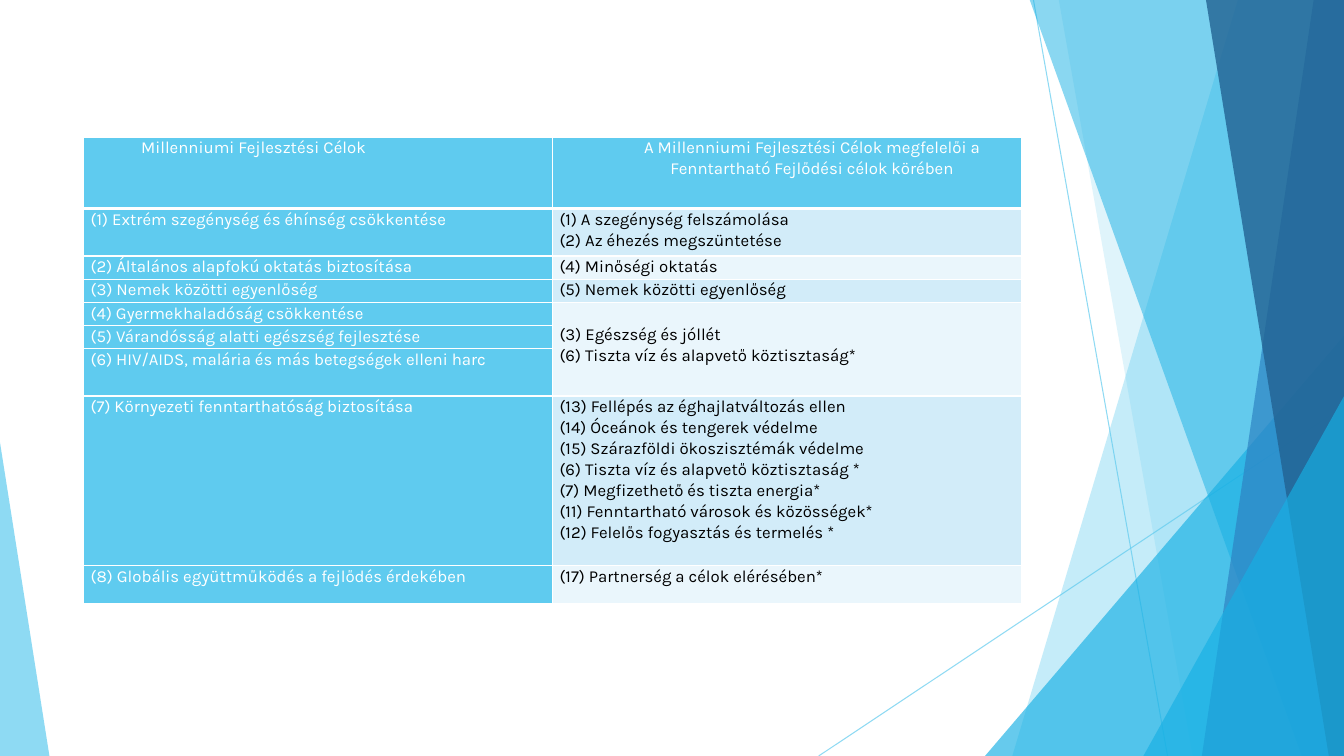
import pptx
import pptx.dml.color
import pptx.enum.shapes
import pptx.enum.text
import pptx.oxml
import pptx.oxml.ns
import pptx.util
from pptx.util import Inches

RGBColor = pptx.dml.color.RGBColor
ALIGN = pptx.enum.text.PP_ALIGN
SKY = RGBColor(0x5F, 0xCB, 0xEF)
CYAN = RGBColor(0x17, 0xB0, 0xE4)
BLUE = RGBColor(0x2E, 0x83, 0xC3)
NAVY = RGBColor(0x22, 0x62, 0x92)
BAND_DARK = RGBColor(0xD2, 0xEC, 0xF9)
BAND_LIGHT = RGBColor(0xEA, 0xF6, 0xFC)
WHITE = RGBColor(0xFF, 0xFF, 0xFF)
BLACK = RGBColor(0, 0, 0)
WIDTH, HEIGHT = 13.33, 7.5
LINE_HEIGHT = 0.21

# Row height, millennium goal, matching sustainable goals
GOAL_ROWS = [
    (0.47, "(1) Extrém szegénység és éhínség csökkentése",
     ["(1) A szegénység felszámolása", "(2) Az éhezés megszüntetése"]),
    (0.23, "(2) Általános alapfokú oktatás biztosítása", ["(4) Minőségi oktatás"]),
    (0.23, "(3) Nemek közötti egyenlőség", ["(5) Nemek közötti egyenlőség"]),
    (0.23, "(4) Gyermekhaladóság csökkentése",
     ["(3) Egészség és jóllét", "(6) Tiszta víz és alapvető köztisztaság*"]),
    (0.23, "(5) Várandósság alatti egészség fejlesztése", []),
    (0.47, "(6) HIV/AIDS, malária és más betegségek elleni harc", []),
    (1.68, "(7) Környezeti fenntarthatóság biztosítása",
     ["(13) Fellépés az éghajlatváltozás ellen",
      "(14) Óceánok és tengerek védelme",
      "(15) Szárazföldi ökoszisztémák védelme",
      "(6) Tiszta víz és alapvető köztisztaság *",
      "(7) Megfizethető és tiszta energia*",
      "(11) Fenntartható városok és közösségek*",
      "(12) Felelős fogyasztás és termelés *"]),
    (0.38, "(8) Globális együttműködés a fejlődés érdekében",
     ["(17) Partnerség a célok elérésében*"]),
]
HEADERS = [
    ("Millenniumi Fejlesztési Célok", ALIGN.JUSTIFY),
    ("A Millenniumi Fejlesztési Célok megfelelői a "
     "Fenntartható Fejlődési célok körében", ALIGN.CENTER),
]


def set_opacity(format_element, percent):
    """Make every solid colour below the element partly transparent."""
    for color in format_element.iter(pptx.oxml.ns.qn("a:srgbClr")):
        alpha = pptx.oxml.ns.qn("a:alpha")
        color.append(color.makeelement(alpha, {"val": str(percent * 1000)}))


def paint(shape, color, opacity):
    shape.shadow.inherit = False
    shape.fill.solid()
    shape.fill.fore_color.rgb = color
    shape.line.fill.background()
    set_opacity(shape._element.spPr, opacity)


def add_thin_line(page, start, end):
    line = page.shapes.add_connector(
        pptx.enum.shapes.MSO_CONNECTOR.STRAIGHT,
        *[Inches(value) for value in start + end])
    line.line.color.rgb = SKY
    line.line.width = pptx.util.Pt(0.75)
    properties = line._element.spPr
    set_opacity(properties, 70)
    properties.append(properties.makeelement(pptx.oxml.ns.qn("a:effectLst"), {}))


def add_edge_panel(page, top_left, bottom_left, color, opacity):
    """Add a panel with a slanted left side that fills up to the right edge."""
    top = -0.01
    corners = [(top_left, top), (WIDTH, top), (WIDTH, HEIGHT), (bottom_left, HEIGHT)]
    points = [(Inches(x), Inches(y)) for x, y in corners]
    builder = page.shapes.build_freeform(*points[0])
    builder.add_line_segments(points[1:], close=True)
    paint(builder.convert_to_shape(), color, opacity)


def add_corner_triangle(page, left, top, width, apex, color, opacity):
    """Add a triangle that stands on the bottom edge of the page."""
    triangle = page.shapes.add_shape(
        pptx.enum.shapes.MSO_SHAPE.ISOSCELES_TRIANGLE,
        Inches(left), Inches(top), Inches(width), Inches(HEIGHT - top))
    triangle.adjustments[0] = apex
    paint(triangle, color, opacity)


def add_backdrop(page):
    add_thin_line(page, (10.25, 0), (11.58, HEIGHT))
    add_thin_line(page, (WIDTH, 4.03), (8.12, HEIGHT))
    add_edge_panel(page, 12.28, 10.04, SKY, 36)
    add_edge_panel(page, 10.5, 11.83, SKY, 20)
    add_corner_triangle(page, 9.77, 3.33, 3.56, 1, CYAN, 66)
    add_edge_panel(page, 10.21, 12.91, CYAN, 50)
    add_edge_panel(page, 13.03, 11.92, BLUE, 70)
    add_edge_panel(page, 11.96, 13.18, NAVY, 80)
    add_corner_triangle(page, 11.34, 3.93, 1.99, 1, CYAN, 66)
    add_corner_triangle(page, 0, 4.39, 0.49, 0, SKY, 70)


def set_borders(cell, bottom_width):
    properties = cell._tc.get_or_add_tcPr()
    for side, width in (("L", 1), ("R", 1), ("T", 1), ("B", bottom_width)):
        properties.append(pptx.oxml.parse_xml(
            f'<a:ln{side} {pptx.oxml.ns.nsdecls("a")} w="{pptx.util.Pt(width)}">'
            f'<a:solidFill><a:srgbClr val="{WHITE}"/></a:solidFill></a:ln{side}>'))


def fill_cell(cell, lines, fill, color, align=ALIGN.JUSTIFY, bottom_width=1):
    set_borders(cell, bottom_width)
    cell.fill.solid()
    cell.fill.fore_color.rgb = fill
    cell.margin_left = cell.margin_right = Inches(0.07)
    cell.margin_top = cell.margin_bottom = 0
    cell.text_frame.text = "\n".join(lines)
    for para in cell.text_frame.paragraphs:
        para.alignment = align
        para.line_spacing = 1.07
        para.font.size = pptx.util.Pt(12)
        for span in para.runs:
            span.font.name = "Karla"
            span.font.size = pptx.util.Pt(12)
            span.font.bold = False
            span.font.color.rgb = color


def fill_header(cell, text, align):
    fill_cell(cell, [text], SKY, WHITE, align, bottom_width=3)
    para = cell.text_frame.paragraphs[0]
    para.space_after = pptx.util.Pt(8)
    para._p.get_or_add_pPr().set("marL", str(Inches(0.5)))


def add_goal_table(page):
    heights = [0.71] + [height for height, _, _ in GOAL_ROWS]
    table = page.shapes.add_table(
        len(heights), 2, Inches(0.83), Inches(1.36),
        Inches(9.3), Inches(sum(heights))).table
    for row, height in zip(table.rows, heights):
        row.height = Inches(height)
    for column, (text, align) in enumerate(HEADERS):
        fill_header(table.cell(0, column), text, align)
    for index, (_, millennium_goal, sustainable_goals) in enumerate(GOAL_ROWS, 1):
        band = BAND_DARK if index % 2 else BAND_LIGHT
        fill_cell(table.cell(index, 0), [millennium_goal], SKY, WHITE)
        fill_cell(table.cell(index, 1), sustainable_goals, band, BLACK)
    health_cell = table.cell(4, 1)
    health_cell.merge(table.cell(6, 1))
    health_cell.margin_top = Inches(LINE_HEIGHT)


def main():
    deck = pptx.Presentation()
    deck.slide_width, deck.slide_height = Inches(WIDTH), Inches(HEIGHT)
    blank_layout = deck.slide_layouts[6]
    page = deck.slides.add_slide(blank_layout)
    add_backdrop(page)
    add_goal_table(page)
    deck.save("out.pptx")


if __name__ == "__main__":
    main()
